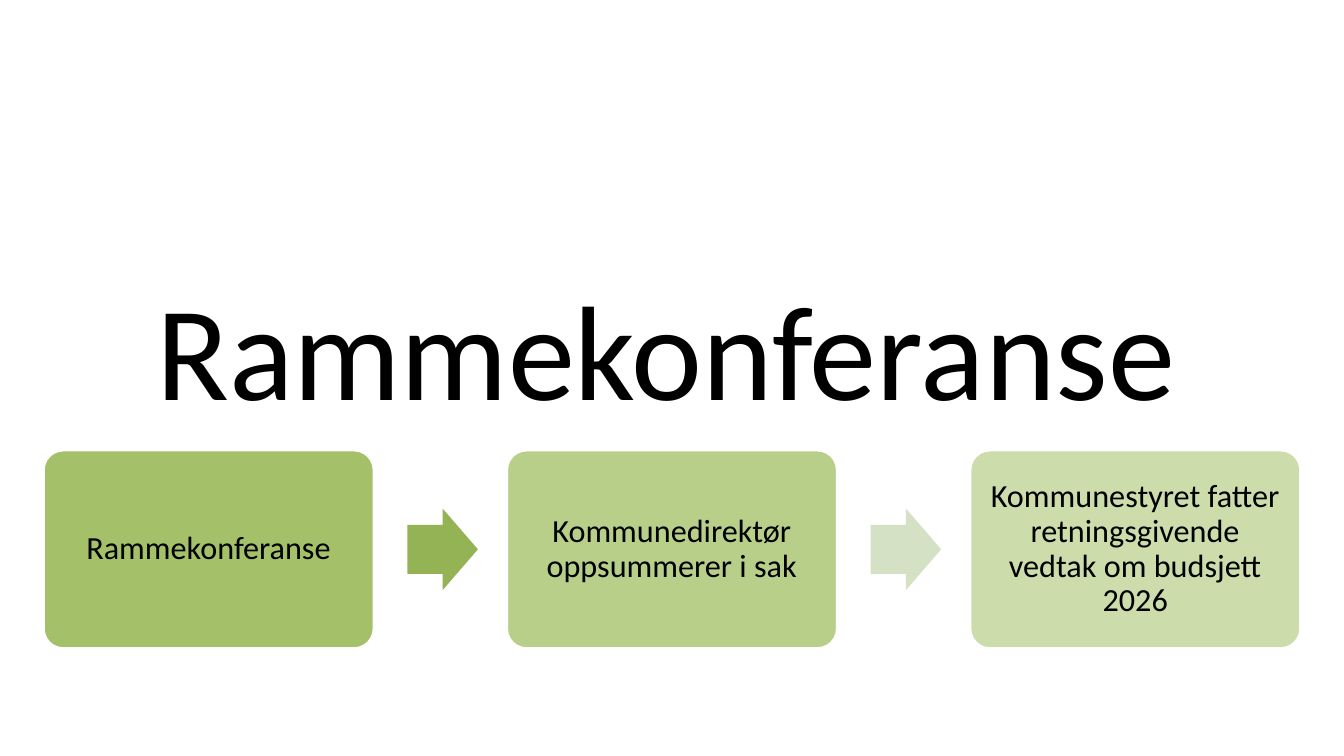
from lxml.etree import SubElement
from pptx import Presentation
from pptx.dml.color import RGBColor
from pptx.enum.shapes import MSO_SHAPE
from pptx.enum.text import MSO_ANCHOR, MSO_AUTO_SIZE, PP_ALIGN
from pptx.oxml.ns import qn
from pptx.util import Inches, Pt

COLOURS = {
    "step": "9BBB59",
    "border": "FFFFFF",
    "text": "000000",
    "first_arrow": "94B355",
    "second_arrow": "D5E1C4",
}
STEPS = [
    ("Rammekonferanse", 90),
    ("Kommunedirektør oppsummerer i sak", 70),
    ("Kommunestyret fatter retningsgivende vedtak om budsjett 2026", 50),
]
ARROWS = ["first_arrow", "second_arrow"]
FONT = "Calibri"
FLOW_LEFT, FLOW_MIDDLE, COLUMN_PITCH = 0.43, 5.45, 4.595
STEP_WIDTH, STEP_HEIGHT = 3.28, 1.97
ARROW_OFFSET, ARROW_WIDTH, ARROW_HEIGHT = 3.61, 0.7, 0.81


def colour(name):
    return RGBColor.from_string(COLOURS[name])


def add_run(paragraph, text, size):
    run = paragraph.add_run()
    run.text = text
    run.font.name = FONT
    run.font.size = Pt(size)
    run.font.color.rgb = colour("text")


def add_title(slide, text):
    title = slide.shapes.title
    title.left, title.top = Inches(1.45), Inches(2.59)
    title.width, title.height = Inches(11.34), Inches(1.72)
    frame = title.text_frame
    frame.word_wrap = True
    frame.auto_size = MSO_AUTO_SIZE.SHAPE_TO_FIT_TEXT
    frame.vertical_anchor = MSO_ANCHOR.TOP
    paragraph = frame.paragraphs[0]
    paragraph.alignment = PP_ALIGN.LEFT
    add_run(paragraph, text, 96)


def add_flow_shape(slide, kind, left, width, height, fill):
    shape = slide.shapes.add_shape(
        kind, Inches(left), Inches(FLOW_MIDDLE - height / 2), Inches(width), Inches(height)
    )
    shape.shadow.inherit = False
    shape.fill.solid()
    shape.fill.fore_color.rgb = colour(fill)
    return shape


def add_step(slide, column, text, opacity):
    left = FLOW_LEFT + column * COLUMN_PITCH
    step = add_flow_shape(
        slide, MSO_SHAPE.ROUNDED_RECTANGLE, left, STEP_WIDTH, STEP_HEIGHT, "step"
    )
    step.adjustments[0] = 0.1
    fill_colour = step.element.spPr.find(qn("a:solidFill")).find(qn("a:srgbClr"))
    SubElement(fill_colour, qn("a:alpha"), val=str(opacity * 1000))
    step.line.color.rgb = colour("border")
    step.line.width = Pt(2)
    frame = step.text_frame
    frame.word_wrap = True
    frame.vertical_anchor = MSO_ANCHOR.MIDDLE
    frame.margin_left = frame.margin_right = Inches(0.1)
    frame.margin_top = frame.margin_bottom = Inches(0.1)
    paragraph = frame.paragraphs[0]
    paragraph.alignment = PP_ALIGN.CENTER
    paragraph.line_spacing = 0.9
    add_run(paragraph, text, 23)


def add_arrow(slide, column, fill):
    left = FLOW_LEFT + column * COLUMN_PITCH + ARROW_OFFSET
    arrow = add_flow_shape(
        slide, MSO_SHAPE.RIGHT_ARROW, left, ARROW_WIDTH, ARROW_HEIGHT, fill
    )
    arrow.adjustments[0] = 0.6
    arrow.adjustments[1] = 0.5
    arrow.line.fill.background()


def main():
    presentation = Presentation()
    presentation.slide_width = Inches(13.33)
    presentation.slide_height = Inches(7.5)
    slide = presentation.slides.add_slide(presentation.slide_layouts[5])
    add_title(slide, "Rammekonferanse")
    for column, (text, opacity) in enumerate(STEPS):
        add_step(slide, column, text, opacity)
    for column, fill in enumerate(ARROWS):
        add_arrow(slide, column, fill)
    presentation.save("out.pptx")


if __name__ == "__main__":
    main()
